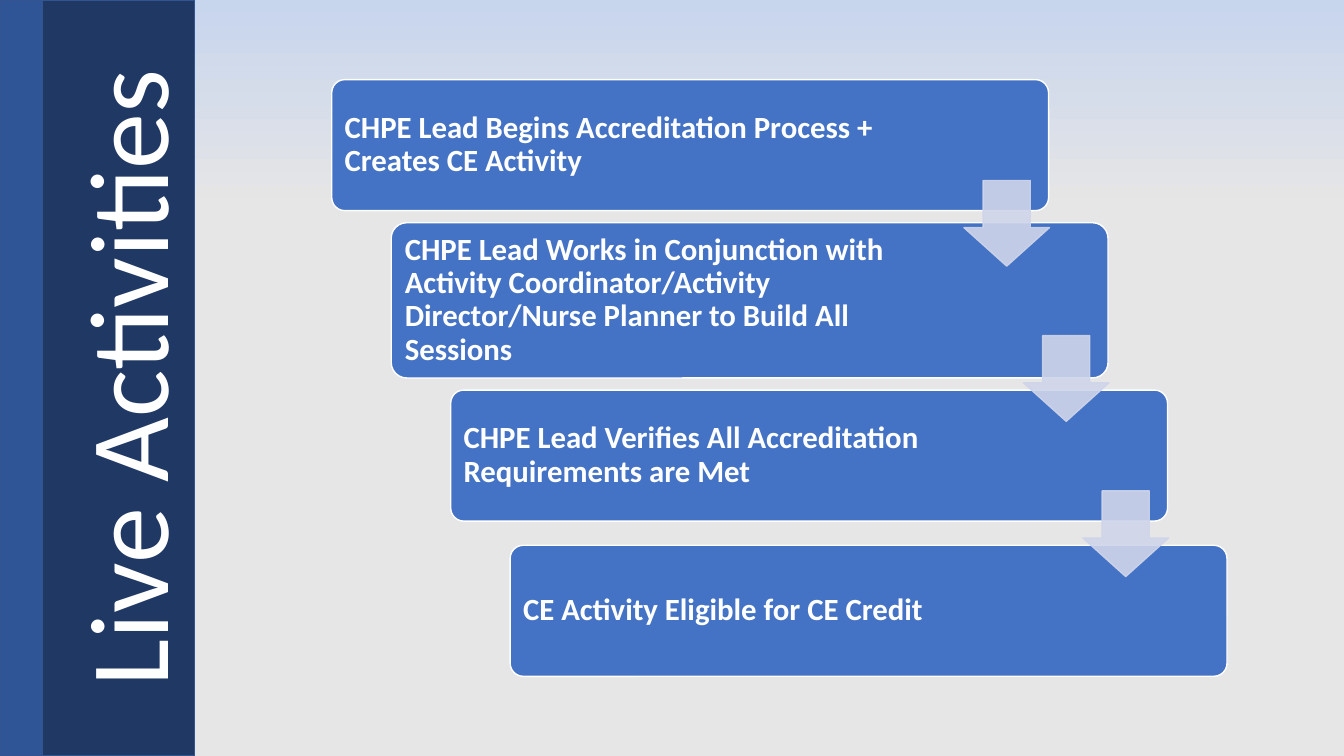
from dataclasses import dataclass

from lxml.etree import SubElement
from pptx import Presentation
from pptx.dml.color import RGBColor
from pptx.enum.shapes import MSO_SHAPE
from pptx.enum.text import MSO_ANCHOR, MSO_AUTO_SIZE, PP_ALIGN
from pptx.oxml.ns import qn
from pptx.util import Inches, Pt


@dataclass(frozen=True)
class Theme:
    font: str = "Calibri"
    title_size: int = 80
    step_size: int = 22
    white: str = "FFFFFF"
    navy: str = "203864"
    edge: str = "2F5597"
    outline: str = "325491"
    card: str = "4472C4"
    arrow: str = "CFD5EA"
    sky: str = "C7D5ED"
    ground: str = "E7E6E6"


THEME = Theme()
WIDTH, HEIGHT = 13.33, 7.5
STEPS = [
    "CHPE Lead Begins Accreditation Process + Creates CE Activity",
    "CHPE Lead Works in Conjunction with Activity Coordinator/Activity "
    "Director/Nurse Planner to Build All Sessions",
    "CHPE Lead Verifies All Accreditation Requirements are Met",
    "CE Activity Eligible for CE Credit",
]
CARD_HEIGHTS = [1.3, 1.54, 1.3, 1.3]


def apply(target, settings):
    for attribute, value in settings.items():
        setattr(target, attribute, value)


def add_block(slide, preset, box, fill, line, adjustments=()):
    block = slide.shapes.add_shape(preset, *map(Inches, box))
    block.shadow.inherit = False
    block.fill.solid()
    block.fill.fore_color.rgb = RGBColor.from_string(fill)
    block.line.color.rgb = RGBColor.from_string(line)
    block.line.width = Pt(1)
    for index, value in enumerate(adjustments):
        block.adjustments[index] = value
    return block


def write(frame, text, size, bold, align, margins):
    apply(frame, {
        "text": text,
        "word_wrap": True,
        "auto_size": MSO_AUTO_SIZE.NONE,
        "vertical_anchor": MSO_ANCHOR.MIDDLE,
    })
    apply(frame, {f"margin_{side}": Inches(gap) for side, gap in margins.items()})
    paragraph = frame.paragraphs[0]
    apply(paragraph, {"alignment": align, "line_spacing": 0.9})
    font = paragraph.runs[0].font
    apply(font, {"name": THEME.font, "size": Pt(size), "bold": bold})
    font.color.rgb = RGBColor.from_string(THEME.white)


def paint_background(slide):
    fill = slide.background.fill
    fill.gradient()
    fill.gradient_angle = 270
    stops = [(0, THEME.sky), (0.28, THEME.ground)]
    for stop, (position, color) in zip(fill.gradient_stops, stops):
        stop.position = position
        stop.color.rgb = RGBColor.from_string(color)


def build_sidebar(slide, left, top, width, height):
    edge_width = 0.42
    title = slide.shapes.title
    band = add_block(slide, MSO_SHAPE.RECTANGLE,
                     (left + edge_width - 0.01, top, width - edge_width + 0.01, height),
                     THEME.navy, THEME.outline)
    title.element.addprevious(band.element)
    add_block(slide, MSO_SHAPE.RECTANGLE, (left, top, edge_width, height),
              THEME.edge, THEME.outline)

    title_length, title_depth = 7.09, 1.79
    center_x, center_y = left + 1.31, top + height / 2
    apply(title, {
        "left": Inches(center_x - title_length / 2),
        "top": Inches(center_y - title_depth / 2),
        "width": Inches(title_length),
        "height": Inches(title_depth),
        "rotation": 270,
    })
    write(title.text_frame, "Live Activities", THEME.title_size, False, PP_ALIGN.CENTER,
          {"left": 0.1, "right": 0.1, "top": 0.05, "bottom": 0.05})


def add_arrow(slide, left, top):
    arrow = add_block(slide, MSO_SHAPE.DOWN_ARROW, (left, top, 0.85, 0.85),
                      THEME.arrow, THEME.arrow, (0.55, 0.45))
    for color in arrow.element.spPr.iter(qn("a:srgbClr")):
        SubElement(color, qn("a:alpha"), val="90000")


def build_staircase(slide, left, top, width, height):
    shift, pitch, card_width, row_height = 0.59, 1.54, 7.11, 1.3
    for index, (step, card_height) in enumerate(zip(STEPS, CARD_HEIGHTS)):
        card_top = top + index * pitch - (card_height - row_height) / 2
        card = add_block(slide, MSO_SHAPE.ROUNDED_RECTANGLE,
                         (left + index * shift, card_top, card_width, card_height),
                         THEME.card, THEME.white, (0.1,))
        write(card.text_frame, step, THEME.step_size, True, PP_ALIGN.LEFT,
              {"left": 0.09, "right": 1.53, "top": 0.09, "bottom": 0.09})
    for index in range(len(STEPS) - 1):
        add_arrow(slide, left + 6.27 + index * shift, top + 1 + index * pitch)


def build_slide(deck):
    slide = deck.slides.add_slide(deck.slide_layouts[5])
    paint_background(slide)
    build_staircase(slide, 3.29, 0.79, 8.89, 5.92)
    build_sidebar(slide, 0, 0, 1.93, HEIGHT)


def main():
    deck = Presentation()
    apply(deck, {"slide_width": Inches(WIDTH), "slide_height": Inches(HEIGHT)})
    build_slide(deck)
    deck.save("out.pptx")


if __name__ == "__main__":
    main()
